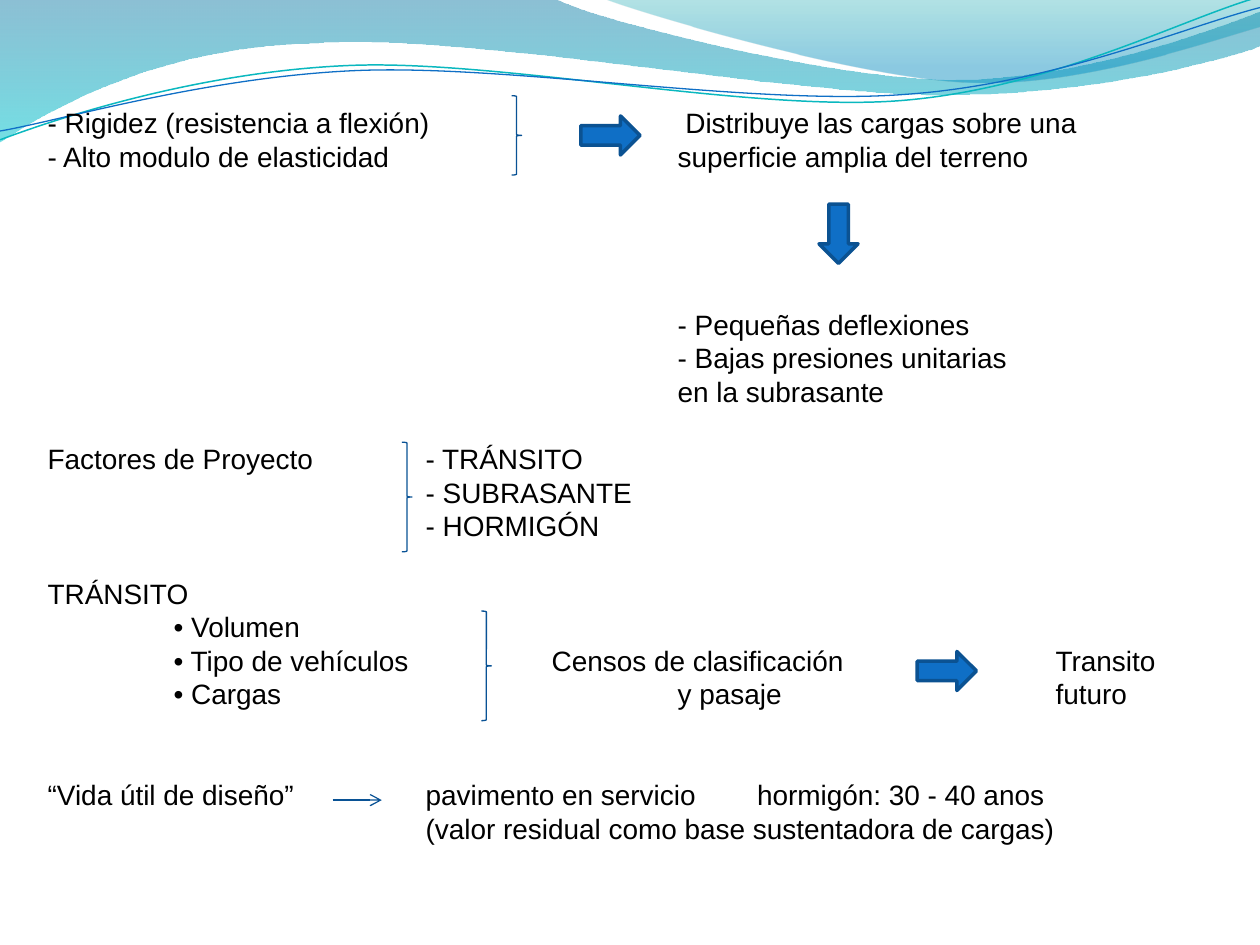
import math
import pptx
import pptx.util
import pptx.dml.color
import pptx.enum.shapes
import pptx.enum.text
import pptx.oxml
import pptx.oxml.ns

RGBColor = pptx.dml.color.RGBColor
SHAPE = pptx.enum.shapes.MSO_SHAPE
BLACK = RGBColor(0x00, 0x00, 0x00)
BLUE = RGBColor(0x0F, 0x6F, 0xC6)
DARK_BLUE = RGBColor(0x0B, 0x52, 0x92)
BRACE_BLUE = RGBColor(0x09, 0x52, 0x95)
TEAL = RGBColor(0x0A, 0xB8, 0xBF)
OCEAN = RGBColor(0x00, 0x74, 0xA1)
CYAN = RGBColor(0x00, 0xC6, 0xCF)
LAGOON = RGBColor(0x00, 0xA1, 0xA9)
SKY = RGBColor(0x00, 0x8B, 0xBF)

prs = pptx.Presentation()
prs.slide_width = pptx.util.Inches(10)
prs.slide_height = pptx.util.Inches(7.5)
COL = prs.slide_width / 10
ROW = prs.slide_height / 7.5
LINE = 19.2
TILT = 2.7
WAVE_X, WAVE_Y = 4.99, 0.58
s = prs.slides.add_slide(prs.slide_layouts[6])


def grid(x, y):
    return round(x * COL), round(y * ROW)


def add_child(parent, tag, **attrs):
    el = pptx.oxml.parse_xml(f"<a:{tag} {pptx.oxml.ns.nsdecls('a')}/>")
    for name, value in attrs.items():
        el.set(name, str(value))
    parent.append(el)
    return el


waves = [
    ([(0, 0), (4.4, -0.01), (4.76, 0.17, 6.64, 0.63, 7.58, 0.63),
      (8.53, 0.63, 9.58, 0.26, 10, 0.09), (10.01, 0.36),
      (9.83, 0.44, 8.7, 0.76, 7.46, 0.75), (6.22, 0.75, 3.82, 0.28, 2.57, 0.34),
      (1.29, 0.36, 0.46, 0.83, -0.01, 1.13), (0, 0)],
     [(0, OCEAN, 45), (1, CYAN, 55)], None),
    ([(4.79, -0.01), (5.09, 0.11, 6.82, 0.62, 7.69, 0.65),
      (8.56, 0.69, 9.61, 0.32, 10, 0.21), (10, 0), (4.79, -0.01)],
     [(0, LAGOON, 30), (0.8, SKY, 45)], None),
    ([(0, 1.11), (0.48, 0.93, 1.58, 0.57, 2.77, 0.52),
      (3.95, 0.47, 5.93, 0.89, 7.13, 0.8), (8.33, 0.71, 9.38, 0.15, 9.98, -0.02)],
     None, (TEAL, 0.85)),
    ([(0, 1.04), (0.47, 0.96, 1.64, 0.61, 2.83, 0.56),
      (4.03, 0.51, 5.97, 0.84, 7.17, 0.75), (8.36, 0.67, 9.41, 0.21, 10, 0.06)],
     None, (BLUE, 0.75)),
]
for parts, stops, stroke in waves:
    angle = math.radians(TILT if stroke else 0)
    cos, sin = math.cos(angle), math.sin(angle)
    segments = []
    for part in parts:
        offsets = [(x - WAVE_X, y - WAVE_Y) for x, y in zip(part[::2], part[1::2])]
        segments.append([grid(WAVE_X + x * cos - y * sin, WAVE_Y + x * sin + y * cos)
                         for x, y in offsets])
    builder = s.shapes.build_freeform(*segments[0][0])
    builder.add_line_segments([seg[-1] for seg in segments[1:]], close=stops is not None)
    sp = builder.convert_to_shape()
    sp.shadow.inherit = False
    lines = sp._element.spPr.findall(".//" + pptx.oxml.ns.qn("a:lnTo"))
    for line, seg in zip(lines, segments[1:]):
        if len(seg) == 3:
            curve = add_child(line.getparent(), "cubicBezTo")
            for x, y in seg:
                add_child(curve, "pt", x=x - sp.left, y=y - sp.top)
            line.getparent().replace(line, curve)
    if stops:
        sp.line.fill.background()
        sp.fill.gradient()
        sp.fill.gradient_angle = 270
        for stop, (position, color, opacity) in zip(sp.fill.gradient_stops, stops):
            stop.position = position
            stop.color.rgb = color
        clrs = sp._element.spPr.findall(".//" + pptx.oxml.ns.qn("a:srgbClr"))
        for clr, (position, color, opacity) in zip(clrs, stops):
            add_child(clr, "alpha", val=opacity * 1000)
    else:
        sp.rotation = 360 - TILT
        sp.fill.background()
        sp.line.color.rgb = stroke[0]
        sp.line.width = pptx.util.Pt(stroke[1])

paragraphs = [
    (0, [5], ["- Rigidez (resistencia a flexión)\t Distribuye las cargas sobre una"]),
    (0, [5], ["- Alto modulo de elasticidad\tsuperficie amplia del terreno"]),
    (4, [5], ["\t- Pequeñas deflexiones"]),
    (0, [5], ["\t- Bajas presiones unitarias", "\ten la subrasante"]),
    (1, [3], ["Factores de Proyecto\t- TRÁNSITO"]),
    (0, [3], ["\t- SUBRASANTE"]),
    (0, [3], ["\t- HORMIGÓN"]),
    (1, [], ["TRÁNSITO"]),
    (0, [1], ["\t• Volumen"]),
    (0, [1, 4, 8], ["\t• Tipo de vehículos\tCensos de clasificación\tTransito"]),
    (0, [1, 5, 8], ["\t• Cargas\ty pasaje\tfuturo"]),
    (2, [3, 5.63], ["“Vida útil de diseño”\tpavimento en servicio\thormigón: 30 - 40 anos",
                    "\t(valor residual como base sustentadora de cargas)"]),
]
sp = s.shapes.add_textbox(*grid(0.28, 0.49), *grid(9.45, 6.29))
tf = sp.text_frame
tf.word_wrap = True
tf.vertical_anchor = pptx.enum.text.MSO_ANCHOR.TOP
tf.margin_top = round(0.35 * ROW)
for i, (gap, tabs, texts) in enumerate(paragraphs):
    p = tf.paragraphs[0] if i == 0 else tf.add_paragraph()
    p.line_spacing = pptx.util.Pt(LINE)
    p.space_before = pptx.util.Pt(gap * LINE)
    if tabs:
        tab_list = add_child(p._p.get_or_add_pPr(), "tabLst")
        for tab in tabs:
            add_child(tab_list, "tab", pos=round(tab * COL), algn="l")
    for n, text in enumerate(texts):
        if n:
            p.add_line_break()
        r = p.add_run()
        r.text = text
        r.font.name = "Arial"
        r.font.size = pptx.util.Pt(16)
        r.font.color.rgb = BLACK

for x, y, height in [(4.06, 0.76, 0.63), (3.19, 3.51, 0.87), (3.82, 4.85, 0.87)]:
    sp = s.shapes.add_shape(SHAPE.RIGHT_BRACE, *grid(x, y), *grid(0.08, height))
    sp.shadow.inherit = False
    sp.fill.background()
    sp.line.color.rgb = BRACE_BLUE
    sp.line.width = pptx.util.Pt(0.75)

for x, y, turn in [(4.61, 0.92, 0), (6.42, 1.7, 90), (7.28, 5.17, 0)]:
    sp = s.shapes.add_shape(SHAPE.RIGHT_ARROW, *grid(x, y), *grid(0.47, 0.31))
    sp.shadow.inherit = False
    sp.rotation = turn
    sp.fill.solid()
    sp.fill.fore_color.rgb = BLUE
    sp.line.color.rgb = DARK_BLUE
    sp.line.width = pptx.util.Pt(2)

sp = s.shapes.add_connector(
    pptx.enum.shapes.MSO_CONNECTOR.STRAIGHT, *grid(2.64, 6.35), *grid(3.03, 6.35))
sp.line.color.rgb = BRACE_BLUE
sp.line.width = pptx.util.Pt(0.75)
add_child(sp.line._get_or_add_ln(), "tailEnd", type="arrow")
add_child(sp._element.spPr, "effectLst")

prs.save("out.pptx")
